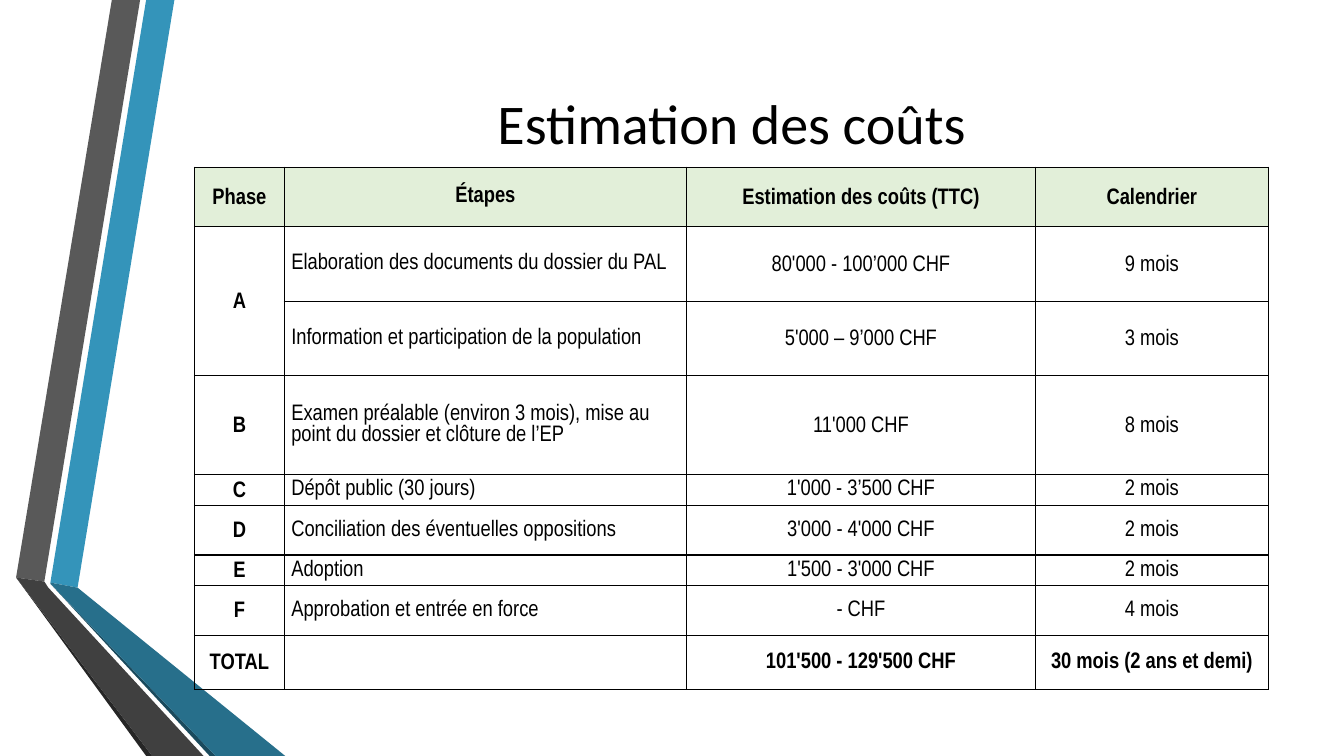
from lxml import etree
from pptx import Presentation
from pptx import util as u
from pptx.dml.color import RGBColor
from pptx.enum import text
from pptx.oxml.ns import qn

BLACK = RGBColor(0x00, 0x00, 0x00)
HEADER_GREEN = RGBColor(0xE2, 0xEF, 0xD9)
BLUE = RGBColor(0x34, 0x94, 0xBA)
BLUE_DARK = RGBColor(0x27, 0x6F, 0x8B)
BLUE_EDGE = RGBColor(0x1A, 0x4A, 0x5D)
GREY = RGBColor(0x59, 0x59, 0x59)
GREY_DARK = RGBColor(0x40, 0x40, 0x40)
GREY_EDGE = RGBColor(0x26, 0x26, 0x26)


def add_run(paragraph, words, font_name, size, bold=False):
    run = paragraph.add_run()
    run.text = words
    run.font.name = font_name
    run.font.size = u.Pt(size)
    run.font.bold = bold
    run.font.color.rgb = BLACK


def add_borders(cell):
    properties = cell._tc.get_or_add_tcPr()
    for position, side in enumerate(("a:lnL", "a:lnR", "a:lnT", "a:lnB")):
        line = etree.Element(qn(side), w=str(u.Pt(1)))
        fill = etree.SubElement(line, qn("a:solidFill"))
        etree.SubElement(fill, qn("a:srgbClr"), val=str(BLACK))
        properties.insert(position, line)


presentation = Presentation()
presentation.slide_width = u.Inches(13.33)
presentation.slide_height = u.Inches(7.5)
slide = presentation.slides.add_slide(presentation.slide_layouts[6])

# Folded ribbons on the left
ribbons = [
    (BLUE, [(0.5, 5.78), (0.77, 5.83), (1.73, 0), (1.45, 0)]),
    (GREY, [(1.39, 0), (1.11, 0), (0.16, 5.73), (0.44, 5.77)]),
    (GREY_EDGE, [(0.16, 5.73), (1.45, 7.5), (1.51, 7.5)]),
    (BLUE_EDGE, [(0.5, 5.79), (2.08, 7.5), (2.14, 7.5)]),
    (BLUE_DARK, [(0.5, 5.78), (0.5, 5.79), (2.14, 7.5), (2.83, 7.5), (0.77, 5.83)]),
    (GREY_DARK, [(0.16, 5.73), (1.51, 7.5), (2.02, 7.5), (0.48, 5.83), (0.44, 5.77)]),
]
for color, corners in ribbons:
    points = [(u.Inches(x), u.Inches(y)) for x, y in corners]
    builder = slide.shapes.build_freeform(*points[0])
    builder.add_line_segments(points[1:], close=True)
    ribbon = builder.convert_to_shape()
    ribbon.shadow.inherit = False
    ribbon.fill.solid()
    ribbon.fill.fore_color.rgb = color
    ribbon.line.fill.background()

# Title
title = slide.shapes.add_textbox(u.Inches(1.93), u.Inches(0.25), u.Inches(10.65), u.Inches(1.92))
title.text_frame.word_wrap = True
title.text_frame.vertical_anchor = text.MSO_ANCHOR.MIDDLE
paragraph = title.text_frame.paragraphs[0]
paragraph.alignment = text.PP_ALIGN.CENTER
add_run(paragraph, "Estimation des coûts", "Calibri", 40)

# Cost table
costs = [
    ("Phase", "Étapes", "Estimation des coûts (TTC)", "Calendrier"),
    ("A", "Elaboration des documents du dossier du PAL", "80'000 - 100’000 CHF", "9 mois"),
    ("", "Information et participation de la population", "5'000 – 9’000 CHF", "3 mois"),
    ("B", "Examen préalable (environ 3 mois), mise au point du dossier et clôture de l’EP",
     "11'000 CHF", "8 mois"),
    ("C", "Dépôt public (30 jours)", "1'000 - 3’500 CHF", "2 mois"),
    ("D", "Conciliation des éventuelles oppositions", "3'000 - 4'000 CHF", "2 mois"),
    ("E", "Adoption", "1'500 - 3'000 CHF", "2 mois"),
    ("F", "Approbation et entrée en force", "- CHF", "4 mois"),
    ("TOTAL", "", "101'500 - 129'500 CHF", "30 mois (2 ans et demi)"),
]
column_widths = [0.89, 3.99, 3.46, 2.31]
row_heights = [0.59, 0.74, 0.74, 0.98, 0.26, 0.49, 0.26, 0.49, 0.54]
PHASE, STEP = 0, 1
HEADER, LAST_SPACED, TOTAL = 0, 3, len(costs) - 1

frame = slide.shapes.add_table(len(costs), len(column_widths), u.Inches(1.93), u.Inches(1.66),
                               u.Inches(sum(column_widths)), u.Inches(sum(row_heights)))
table = frame.table
table.first_row = False
table.horz_banding = False
for column, width in zip(table.columns, column_widths):
    column.width = u.Inches(width)
for row, height in zip(table.rows, row_heights):
    row.height = u.Inches(height)
table.cell(1, PHASE).merge(table.cell(2, PHASE))

for r, row_words in enumerate(costs):
    for c, words in enumerate(row_words):
        cell = table.cell(r, c)
        cell.vertical_anchor = text.MSO_ANCHOR.MIDDLE
        cell.margin_left = cell.margin_right = u.Inches(0.07)
        cell.margin_top = cell.margin_bottom = 0
        if r == HEADER:
            cell.fill.solid()
            cell.fill.fore_color.rgb = HEADER_GREEN
        else:
            cell.fill.background()
        add_borders(cell)
        if not words:
            continue
        paragraph = cell.text_frame.paragraphs[0]
        if c != STEP or r == HEADER:
            paragraph.alignment = text.PP_ALIGN.CENTER
        if c == PHASE or (c != STEP and r <= LAST_SPACED):
            paragraph.line_spacing = 1.15
        add_run(paragraph, words, "Arial Narrow", 16, bold=c == PHASE or r in (HEADER, TOTAL))

presentation.save("out.pptx")
